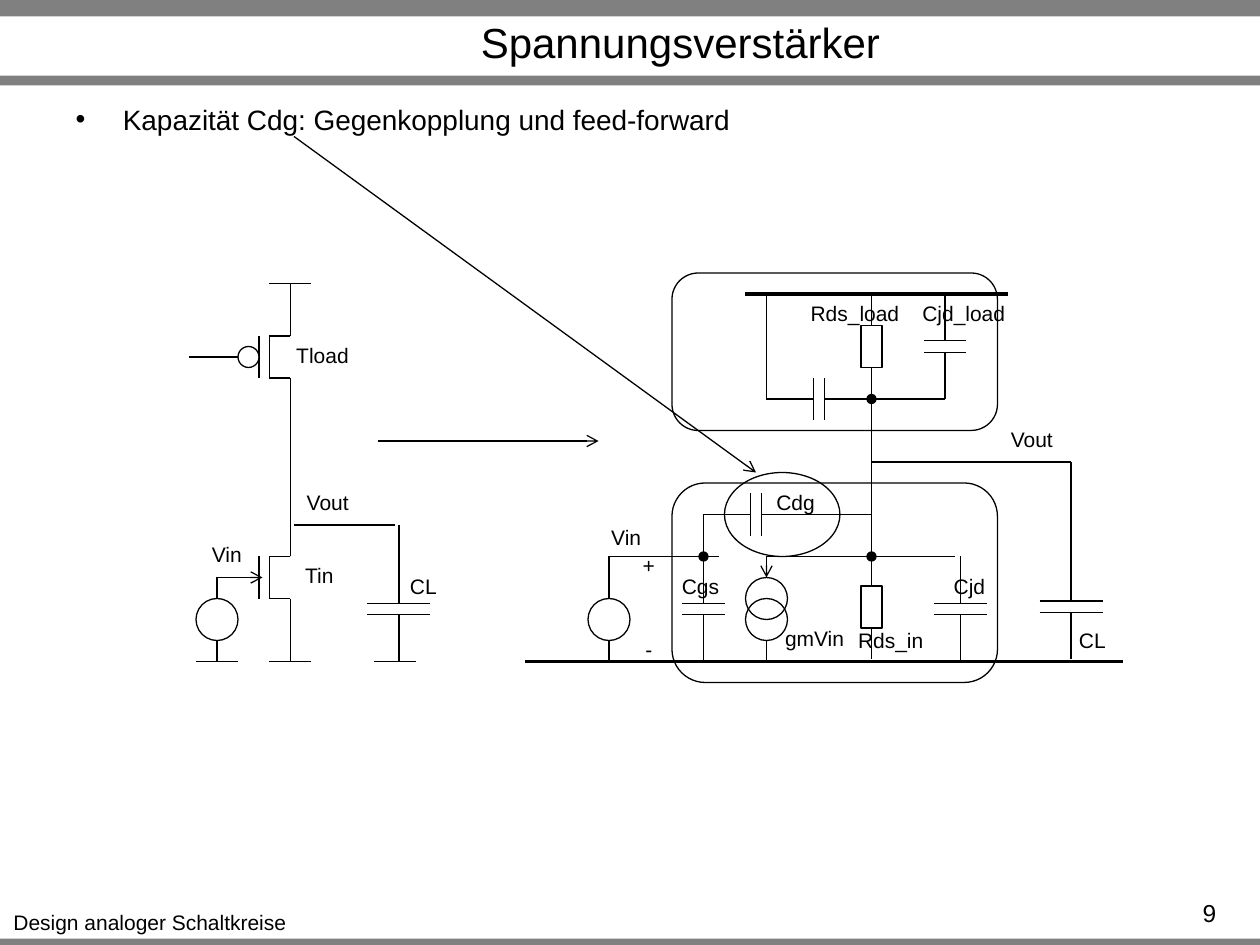
from lxml import etree
from pptx import Presentation
from pptx.dml.color import RGBColor
from pptx.enum import shapes, text
from pptx.oxml.ns import qn
from pptx.util import Pt

THEME = {
    "font": "Arial", "ink": RGBColor(0, 0, 0), "bar": RGBColor(128, 128, 128),
    "paper": RGBColor(255, 255, 255),
    "title": 24, "body": 16, "page": 14, "label": 12, "wire": 0.75, "rail": 1.75,
}
LEFT, MID = text.PP_ALIGN.LEFT, text.PP_ALIGN.CENTER
RIGHT = text.PP_ALIGN.RIGHT
BOX, OVAL = shapes.MSO_SHAPE.RECTANGLE, shapes.MSO_SHAPE.OVAL
ROUND = shapes.MSO_SHAPE.ROUNDED_RECTANGLE

# Levels (y) and nodes (x) of the circuit
VDD, LOAD, OUT, FEED, NODE, GND = 168, 228, 264, 294, 318, 378
DRAIN, SRC, GATE, GM, MAIN, CJD, CL = 166, 348, 402, 438, 498, 549, 612
VIN, COUT = 124, 228

TITLE = "Spannungsverstärker"
BODY = "Kapazität Cdg: Gegenkopplung und feed-forward"
FOOT, PAGE = "Design analoger Schaltkreise", "9"

BARS = [(0, 0, 720, 9.4), (0, 43.2, 720, 5.6), (0, 536.4, 720, 3.6)]
LABELS = [  # text, left, top, width
    ("Tload", 162, 192.2, 44.6), ("Tin", 167, 318, 31),
    ("CL", 226.8, 324, 30.2), ("Vin", 113.8, 306, 31.7),
    ("Vout", 167.8, 276, 38.9), ("Rds_in", 483.1, 355, 51.8),
    ("CL", 609.1, 355, 30.2), ("Vin", 342, 296, 31.7),
    ("gmVin", 441.4, 354, 48.2), ("Rds_load", 455.8, 168, 65.5),
    ("Cjd", 537.8, 324, 32.4), ("Cgs", 382.3, 324, 36),
    ("Cjd_load", 519.8, 168, 61.9), ("Cdg", 436.3, 276, 36.7),
    ("Vout", 570.2, 240, 38.9), ("+", 360, 312, 21.6), ("-", 361.4, 360, 18.7),
]
WIRES = [  # x1, y1, x2, y2
    (DRAIN, 234, DRAIN, 300), (154, GND, 178, GND), (DRAIN, 360, DRAIN, GND),
    (154, 162, 178, 162), (DRAIN, 180, DRAIN, 162), (108, 204, 148, 204),
    (VIN, 330, VIN, 342), (VIN, 366, VIN, GND), (112, GND, 136, GND),
    (168, 300, 226, 300), (COUT, 300, COUT, 324), (214, GND, 238, GND),
    (SRC, NODE, 411, NODE), (SRC, NODE, SRC, 342), (SRC, 366, SRC, GND),
    (336, GND, 360, GND), (GM, 366, GM, GND), (GM, NODE, GM, 330),
    (GM, NODE, 468, NODE), (468, NODE, 546, NODE),
    (MAIN, NODE, MAIN, 216), (MAIN, LOAD, 540, LOAD), (GM, LOAD, GM, VDD),
    (GATE, NODE, GATE, FEED), (462, FEED, MAIN, FEED),
    (MAIN, OUT, CL, OUT), (CL, NODE, CL, OUT),
]
RAILS = [(300, GND, 642, GND), (426, VDD, 576, VDD)]
ARROWS = [(126, 330, 150, 330), (216, 252, 342, 252),
          (168, 78, 432, 270), (GM, NODE, GM, 330)]
DOTS = [(408, NODE, GATE, NODE), (504, NODE, MAIN, NODE), (504, LOAD, MAIN, LOAD)]
CAPS = [  # x, y of the upper or left end, plate length, upright
    (COUT, NODE, 36, True), (CL, 316.8, 36, True), (CJD, NODE, 30, True),
    (GATE, NODE, 24, True), (540, VDD, 24, True),
    (GATE, FEED, 24, False), (GM, LOAD, 24, False),
]
COILS = [(MAIN, 316.8), (MAIN, 168)]
FETS = [330, 204]
SOURCES = [(VIN, 354), (GM, 342), (GM, 354), (SRC, 354)]
FRAMES = [(ROUND, 384, 276, 186, 114), (ROUND, 384, 156, 186, 90),
          (OVAL, 414, 270, 66, 48)]

deck = Presentation()
deck.slide_width, deck.slide_height = Pt(720), Pt(540)
slide = deck.slides.add_slide(deck.slide_layouts[1])
parts = slide.shapes


def style(para, size, align):
    para.alignment = align
    font = para.font
    font.name, font.size, font.bold = THEME["font"], Pt(size), False
    font.color.rgb = THEME["ink"]


def place(item, left, top, wide, high):
    item.left, item.top, item.width, item.height = map(
        Pt, (left, top, wide, high))


def write(words, left, top, wide, high=21.6, size=THEME["label"],
          align=MID, wrap=False):
    box = parts.add_textbox(*map(Pt, (left, top, wide, high)))
    frame = box.text_frame
    frame.text, frame.word_wrap = words, wrap
    style(frame.paragraphs[0], size, align)


def wire(x1, y1, x2, y2, width=THEME["wire"], end=None):
    line = parts.add_connector(shapes.MSO_CONNECTOR.STRAIGHT,
                               *map(Pt, (x1, y1, x2, y2)))
    line.line.color.rgb, line.line.width = THEME["ink"], Pt(width)
    if end:
        etree.SubElement(line.line._get_or_add_ln(), qn("a:tailEnd"), type=end)
    etree.SubElement(line._element.spPr, qn("a:effectLst"))
    return line


def draw(kind, left, top, wide, high, fill=None, edge=True):
    item = parts.add_shape(kind, *map(Pt, (left, top, wide, high)))
    item.shadow.inherit = False
    if fill is None:
        item.fill.background()
    else:
        item.fill.solid()
        item.fill.fore_color.rgb = fill
    if edge:
        item.line.color.rgb, item.line.width = THEME["ink"], Pt(THEME["wire"])
    else:
        item.line.fill.background()
    return item


def cap(x, y, plate, upright):
    """Draw two leads and two plates, 60 points long in all."""
    half, near, far, end = plate / 2, 26.7, 33.3, 60
    for a, b, c, d in [(0, 0, near, 0), (near, -half, near, half),
                       (far, -half, far, half), (far, 0, end, 0)]:
        if upright:
            a, b, c, d = b, a, d, c
        wire(x + a, y + b, x + c, y + d)


def coil(x, y):
    """Draw a resistor with its leads, 60 points long in all."""
    body = draw(BOX, x - 6, y + 18, 12, 24)
    wire(x, y, x, y + 18).end_connect(body, 0)
    wire(x, y + 42, x, y + 60).begin_connect(body, 2)


def fet(mid):
    """Draw a transistor whose gate lies at height mid."""
    for x in (148, 154):
        wire(x, mid - 12, x, mid + 12)
    for side in (-1, 1):
        y = mid + 12 * side
        wire(DRAIN, y, 154, y)
        wire(DRAIN, y, DRAIN, y + 18 * side)
    wire(VIN, mid, 136, mid)
    wire(136, mid, 148, mid)


for bar in BARS:
    draw(BOX, *bar, fill=THEME["bar"], edge=False)

head, body = slide.placeholders[0], slide.placeholders[1]
place(head, 93.6, 10.1, 590.4, 27.4)
place(body, 36, 54.7, 648, 131.8)
for item, words, size, align in [(head, TITLE, THEME["title"], MID),
                                 (body, BODY, THEME["body"], LEFT)]:
    frame = item.text_frame
    frame.text, frame.auto_size = words, text.MSO_AUTO_SIZE.NONE
    para = frame.paragraphs[0]
    if item is body:
        para.space_before = Pt(0)
        props = para._p.get_or_add_pPr()
        props.set("marL", str(Pt(27)))
        props.set("indent", str(Pt(-27)))
        etree.SubElement(props, qn("a:buChar"), char="•")
    style(para, size, align)
head.text_frame.vertical_anchor = text.MSO_ANCHOR.MIDDLE

for mid in FETS:
    fet(mid)
for ends in WIRES:
    wire(*ends)
for ends in RAILS:
    wire(*ends, width=THEME["rail"])
for ends in ARROWS:
    wire(*ends, end="arrow")
for ends in DOTS:
    wire(*ends, end="oval")
for spot in CAPS:
    cap(*spot)
for spot in COILS:
    coil(*spot)
for x, y in SOURCES:
    draw(OVAL, x - 12, y - 12, 24, 24)
draw(OVAL, 136, 198, 12, 12, fill=THEME["paper"])
for shape in FRAMES:
    draw(*shape)
for label in LABELS:
    write(*label)
write(FOOT, 0, 516.2, 171.4)
write(PAGE, 426, 509.8, 276, 30.2, THEME["page"], RIGHT, True)

deck.save("out.pptx")
